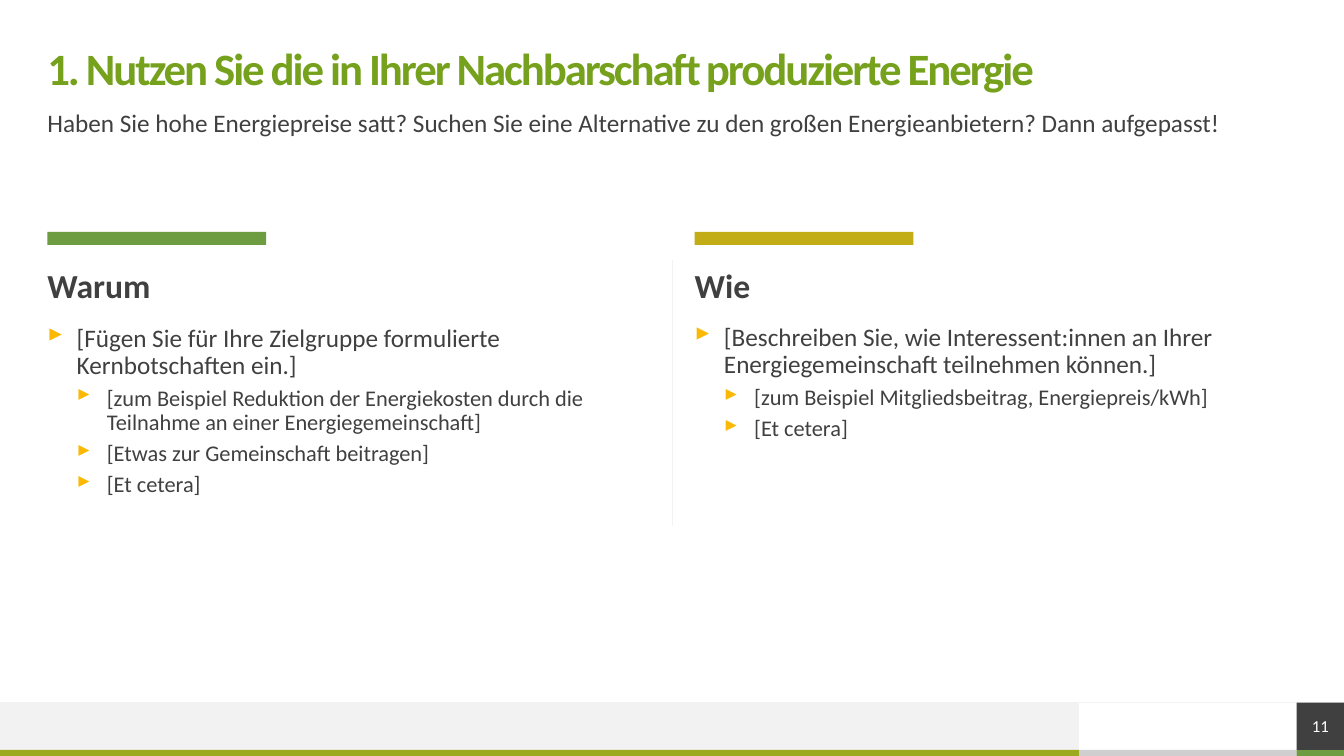
from lxml import etree
from pptx import Presentation
from pptx import util as u
from pptx.dml.color import RGBColor
from pptx.enum import shapes, text
from pptx.oxml.ns import qn

TITLE_GREEN = RGBColor(0x75, 0xA1, 0x1D)
GREEN = RGBColor(0x6D, 0x9D, 0x40)
OLIVE = RGBColor(0x9C, 0xAA, 0x20)
GOLD = RGBColor(0xC3, 0xAD, 0x16)
AMBER = RGBColor(0xFB, 0xB8, 0x04)
DARK = RGBColor(0x40, 0x40, 0x40)
GREY = RGBColor(0xD0, 0xCE, 0xCE)
LIGHT = RGBColor(0xF2, 0xF2, 0xF2)
WHITE = RGBColor(0xFF, 0xFF, 0xFF)

WIDTH, HEIGHT = 13.33, 7.5
MARGIN = 0.47
CONTENT_W = 12.4
COLUMN_W = 5.98
BULLETS = [
    {"size": 18, "margin": 0.29, "hang": 0.29, "before": 10},
    {"size": 16, "margin": 0.59, "hang": 0.3, "before": 5},
]


def inches(*lengths):
    return [u.Inches(v) for v in lengths]


def prepare_frame(sp, anchor=text.MSO_ANCHOR.TOP):
    tf = sp.text_frame
    settings = {"margin_left": 0, "margin_top": 0, "margin_right": 0,
                "margin_bottom": 0, "word_wrap": True, "vertical_anchor": anchor}
    for name, value in settings.items():
        setattr(tf, name, value)
    return tf


def write(p, words, size, color, bold=False):
    r = p.add_run()
    r.text = words
    for name, value in {"name": "Calibri", "size": u.Pt(size), "bold": bold}.items():
        setattr(r.font, name, value)
    r.font.color.rgb = color
    return r


def add_rect(s, box, color):
    sp = s.shapes.add_shape(shapes.MSO_SHAPE.RECTANGLE, *inches(*box))
    sp.shadow.inherit = False
    sp.fill.solid()
    sp.fill.fore_color.rgb = color
    sp.line.fill.background()
    return sp


def add_rule(s, start, end):
    line = s.shapes.add_connector(shapes.MSO_CONNECTOR.STRAIGHT, *inches(*start, *end))
    line.line.color.rgb = LIGHT
    line.line.width = u.Pt(0.5)
    etree.SubElement(line._element.spPr, qn("a:effectLst"))


def add_line_of_text(s, box, words, size, color, bold=False, anchor=text.MSO_ANCHOR.TOP):
    tf = prepare_frame(s.shapes.add_textbox(*inches(*box)), anchor)
    p = tf.paragraphs[0]
    p.line_spacing = 0.9
    return write(p, words, size, color, bold)


def add_bullets(s, box, items):
    tf = prepare_frame(s.shapes.add_textbox(*inches(*box)))
    for i, (level, words) in enumerate(items):
        style = BULLETS[level]
        p = tf.add_paragraph() if i else tf.paragraphs[0]
        pPr = p._p.get_or_add_pPr()
        pPr.set("marL", str(u.Inches(style["margin"])))
        pPr.set("indent", str(-u.Inches(style["hang"])))
        color = etree.SubElement(pPr, qn("a:buClr"))
        etree.SubElement(color, qn("a:srgbClr")).set("val", str(AMBER))
        etree.SubElement(pPr, qn("a:buChar")).set("char", "▸")
        p.level = level
        p.line_spacing = 0.9
        if i:
            p.space_before = u.Pt(style["before"])
        write(p, words, style["size"], DARK)


def add_footer(s, box, number):
    left, top, width, height = box
    strip = 0.06
    tile = height - strip
    number_x = left + width - tile
    accent_x = number_x - 2.16
    base = top + tile
    add_rect(s, (accent_x, base, number_x - accent_x, strip), GREY)
    add_rect(s, (left, top, accent_x - left, tile), LIGHT)
    add_rect(s, (left, base, accent_x - left, strip), OLIVE)
    add_rect(s, (number_x, base, tile, strip), GREEN)
    add_rule(s, (left + width, top), (left, top))
    sp = add_rect(s, (number_x, top, tile, tile), DARK)
    p = prepare_frame(sp, text.MSO_ANCHOR.MIDDLE).paragraphs[0]
    p.alignment = text.PP_ALIGN.CENTER
    write(p, number, 12, WHITE)


def add_heading(s, box, title, subtitle):
    left, top, width, height = box
    r = add_line_of_text(s, (left, top, width, 0.47), title, 32, TITLE_GREEN,
                         True, text.MSO_ANCHOR.MIDDLE)
    r.font._element.set("spc", "-150")
    add_line_of_text(s, (left, top + height - 0.39, width, 0.39), subtitle, 18, DARK)


def add_column(s, box, color, heading, items, list_y):
    left, top, width, height = box
    add_rect(s, (left, top, 2.17, 0.13), color)
    add_line_of_text(s, (left, top + 0.37, width, 0.39), heading, 24, DARK, True)
    add_bullets(s, (left, top + list_y, width, height - list_y), items)


def main():
    prs = Presentation()
    prs.slide_width, prs.slide_height = inches(WIDTH, HEIGHT)
    s = prs.slides.add_slide(prs.slide_layouts[6])
    add_footer(s, (0, 6.97, WIDTH, 0.53), "11")
    add_heading(
        s, (MARGIN, 0.47, CONTENT_W, 1.02),
        "1. Nutzen Sie die in Ihrer Nachbarschaft produzierte Energie",
        "Haben Sie hohe Energiepreise satt? Suchen Sie eine Alternative zu den "
        "großen Energieanbietern? Dann aufgepasst!")
    columns = [
        (GREEN, "Warum", [
            (0, "[Fügen Sie für Ihre Zielgruppe formulierte Kernbotschaften ein.]"),
            (1, "[zum Beispiel Reduktion der Energiekosten durch die Teilnahme "
                "an einer Energiegemeinschaft]"),
            (1, "[Etwas zur Gemeinschaft beitragen]"),
            (1, "[Et cetera]")], 0.93),
        (GOLD, "Wie", [
            (0, "[Beschreiben Sie, wie Interessent:innen an Ihrer "
                "Energiegemeinschaft teilnehmen können.]"),
            (1, "[zum Beispiel Mitgliedsbeitrag, Energiepreis/kWh]"),
            (1, "[Et cetera]")], 0.92),
    ]
    for i, column in enumerate(columns):
        left = MARGIN + i * (CONTENT_W - COLUMN_W)
        add_column(s, (left, 2.3, COLUMN_W, 3.33), *column)
    add_rule(s, (WIDTH / 2, 2.58), (WIDTH / 2, 5.22))
    prs.save("out.pptx")


if __name__ == "__main__":
    main()
